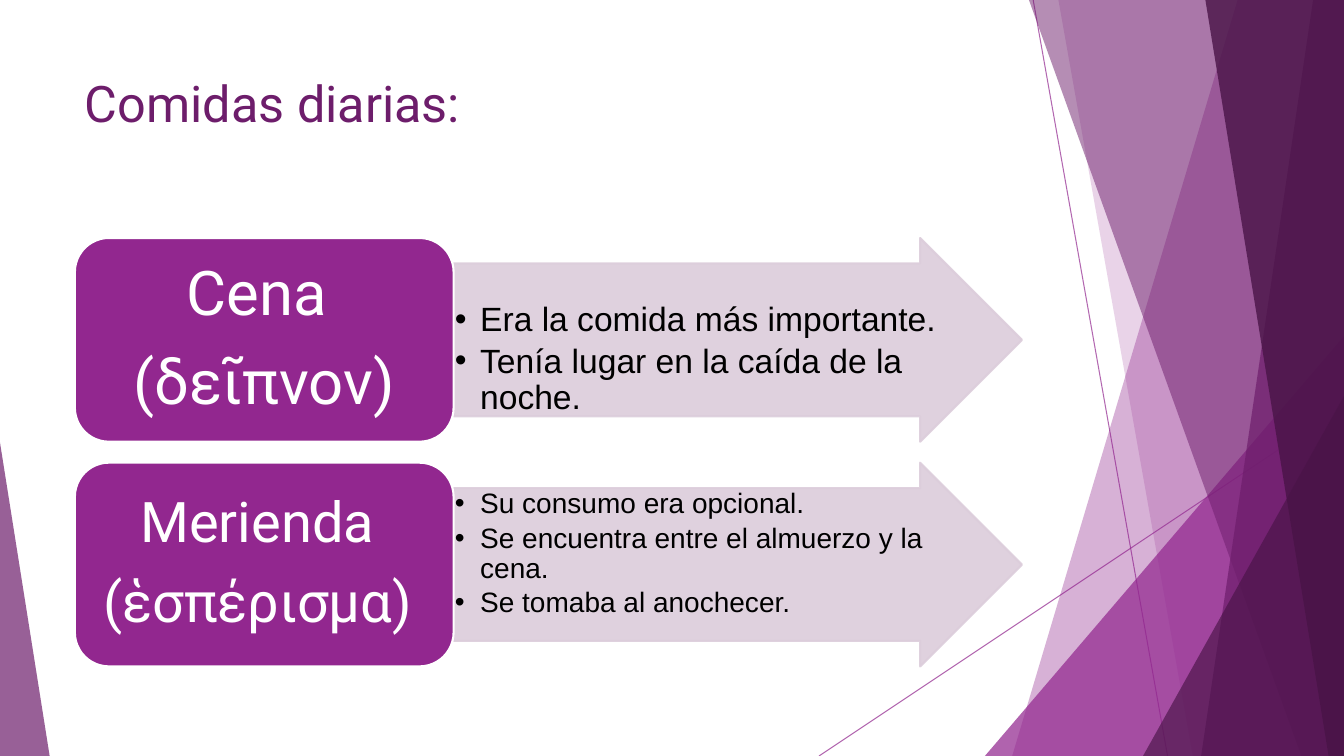
"""Build the slide on daily meals with two labelled arrows."""
from dataclasses import dataclass

from lxml.etree import SubElement
from pptx import Presentation
from pptx.dml.color import RGBColor
from pptx.enum.shapes import MSO_CONNECTOR as CONN, MSO_SHAPE as SHAPE
from pptx.enum.text import MSO_ANCHOR as ANCHOR, MSO_AUTO_SIZE as AUTO, PP_ALIGN as ALIGN
from pptx.oxml.ns import qn
from pptx.util import Pt

TITLE = "Comidas diarias:"
MEALS = [
    {"label": ["Cena ", "(δεῖπνον)"], "label_size": 44, "list_size": 24, "list_inset": 28,
     "facts": ["Era la comida más importante.", "Tenía lugar en la caída de la noche."]},
    {"label": ["Merienda ", "(ἑσπέρισμα) "], "label_size": 40, "list_size": 20, "list_inset": 1,
     "facts": ["Su consumo era opcional.", "Se encuentra entre el almuerzo y la cena.",
               "Se tomaba al anochecer."]},
]


@dataclass(frozen=True)
class Theme:
    """Colours, fonts and type sizes of the slide."""
    accent: str = "92278F"
    dark: str = "6D1D6B"
    deep: str = "491447"
    pale: str = "DCCDDB"
    white: str = "FFFFFF"
    black: str = "000000"
    heading: str = "Roboto"
    body: str = "Arial"
    title_size: int = 36


T = Theme()
W, H = 960, 540
RAYS = [(738, 0, 834, H), (W, 290, 585, H)]
FACETS = [
    ("band", (884, 723), T.accent, 36),
    ("band", (756, 852), T.accent, 20),
    ("triangle", (703.5, 240, 256.5, 1), T.accent, 72),
    ("band", (735, 929.5), T.dark, 50),
    ("band", (938, 858), T.dark, 70),
    ("band", (861, 949), T.deep, 80),
    ("triangle", (816.5, 283, 143.5, 1), T.deep, 66),
    ("triangle", (0, 316, 35.5, 0), T.dark, 70),
]
LEFT, LABEL_W, ARROW_W, LIST_W = 53.5, 270.5, 406, 351.5
ROW_TOP, ROW_H, ROW_PITCH = 170, 145.5, 160.5
SHAFT = 0.75


def rgb(color):
    """Turn a hex string into a colour."""
    return RGBColor.from_string(color)


def fade(s, percent):
    """Give every colour of a shape the same opacity."""
    for clr in s._element.spPr.iter(qn("a:srgbClr")):
        SubElement(clr, qn("a:alpha")).set("val", str(percent * 1000))


def paint(s, fill, line=None):
    """Fill a shape and outline it, or leave it without a line."""
    s.shadow.inherit = False
    s.fill.solid()
    s.fill.fore_color.rgb = rgb(fill)
    if line:
        s.line.color.rgb = rgb(line)
        s.line.width = Pt(1.5)
    else:
        s.line.fill.background()


def place(s, left, top, width, height):
    """Set position and size in points."""
    s.left, s.top, s.width, s.height = Pt(left), Pt(top), Pt(width), Pt(height)


def write(tf, lines, font, size, color, align, anchor, insets, spacing=1.0, after=0):
    """Write one paragraph per line and format it."""
    tf.word_wrap, tf.auto_size, tf.vertical_anchor = True, AUTO.NONE, anchor
    tf.margin_left, tf.margin_top, tf.margin_right, tf.margin_bottom = map(Pt, insets)
    tf.text = "\n".join(lines)
    for p in tf.paragraphs:
        p.alignment, p.line_spacing = align, spacing
        p.space_before, p.space_after = Pt(0), Pt(round(after * size, 1))
        for r in p.runs:
            r.font.name, r.font.size = font, Pt(size)
            r.font.color.rgb = rgb(color)


def add_ray(shapes, x1, y1, x2, y2):
    """Draw one thin line of the backdrop."""
    s = shapes.add_connector(CONN.STRAIGHT, Pt(x1), Pt(y1), Pt(x2), Pt(y2))
    s.line.color.rgb, s.line.width = rgb(T.accent), Pt(0.75)
    fade(s, 70)
    SubElement(s._element.spPr, qn("a:effectLst"))


def add_facet(shapes, kind, geometry, color, opacity):
    """Draw one translucent facet of the backdrop."""
    if kind == "band":
        top_x, bottom_x = geometry
        builder = shapes.build_freeform(Pt(top_x), 0)
        builder.add_line_segments([(Pt(W), 0), (Pt(W), Pt(H)), (Pt(bottom_x), Pt(H))])
        s = builder.convert_to_shape()
    else:
        left, top, width, apex = geometry
        s = shapes.add_shape(SHAPE.ISOSCELES_TRIANGLE, Pt(left), Pt(top), Pt(width), Pt(H - top))
        s.adjustments[0] = apex
    paint(s, color)
    fade(s, opacity)


def add_meal(shapes, body, meal, top):
    """Draw a label, its arrow and the list on the arrow."""
    arrow_left = LEFT + LABEL_W
    arrow = shapes.add_shape(SHAPE.RIGHT_ARROW, Pt(arrow_left), Pt(top), Pt(ARROW_W), Pt(ROW_H))
    arrow.adjustments[0] = SHAFT
    paint(arrow, T.pale, T.pale)
    fade(arrow, 90)

    shapes._spTree.append(body._element)
    place(body, arrow_left, top + ROW_H * (1 - SHAFT) / 2, LIST_W, ROW_H * SHAFT)
    write(body.text_frame, meal["facts"], T.body, meal["list_size"], T.black, ALIGN.LEFT,
          ANCHOR.TOP, (1, meal["list_inset"], 1, 1), 0.9, 0.15)
    for p in body.text_frame.paragraphs:
        pPr = p._p.get_or_add_pPr()
        pPr.set("marL", str(Pt(18)))
        pPr.set("indent", str(-Pt(18)))
        SubElement(pPr, qn("a:buChar")).set("char", "•")

    label = shapes.add_shape(SHAPE.ROUNDED_RECTANGLE, Pt(LEFT), Pt(top), Pt(LABEL_W), Pt(ROW_H))
    paint(label, T.accent, T.white)
    write(label.text_frame, meal["label"], T.heading, meal["label_size"], T.white, ALIGN.CENTER,
          ANCHOR.MIDDLE, (12, 6, 12, 6), 0.9, 0.36)


def main():
    """Build and save the presentation."""
    prs = Presentation()
    prs.slide_width, prs.slide_height = Pt(W), Pt(H)
    slide = prs.slides.add_slide(prs.slide_layouts.get_by_name("Two Content"))
    shapes = slide.shapes
    title, *bodies = slide.placeholders
    for ray in RAYS:
        add_ray(shapes, *ray)
    for facet in FACETS:
        add_facet(shapes, *facet)
    place(title, LEFT, 48, 676.5, 104)
    write(title.text_frame, [TITLE], T.heading, T.title_size, T.dark, ALIGN.LEFT,
          ANCHOR.TOP, (7.2, 3.6, 7.2, 3.6))
    for row, (body, meal) in enumerate(zip(bodies, MEALS)):
        add_meal(shapes, body, meal, ROW_TOP + row * ROW_PITCH)
    prs.save("out.pptx")


if __name__ == "__main__":
    main()
